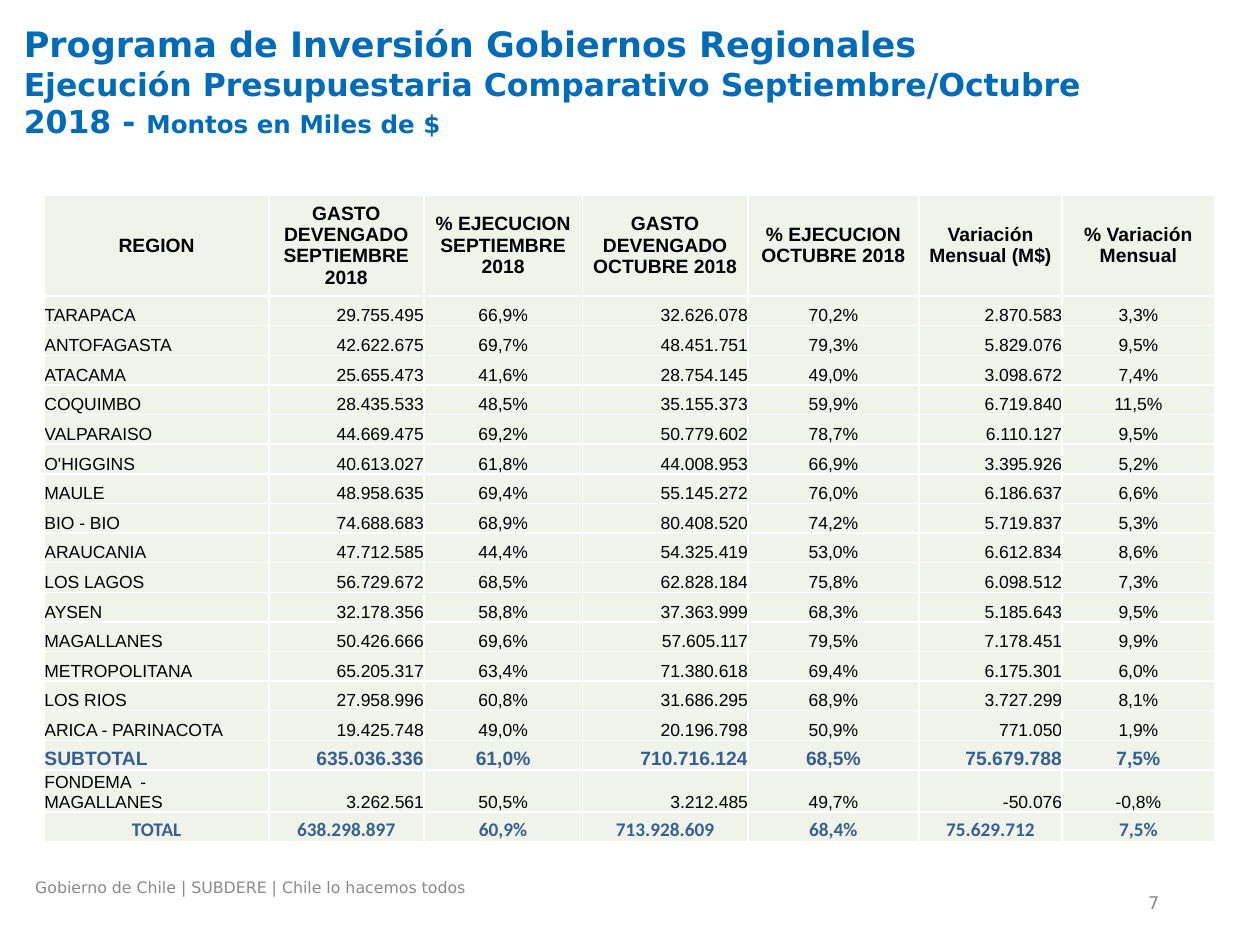
from dataclasses import dataclass

from lxml.etree import SubElement
from pptx import Presentation
from pptx.dml.color import RGBColor as Rgb
from pptx.enum.text import MSO_ANCHOR as Anchor, PP_ALIGN as Align
from pptx.oxml.ns import qn
from pptx.util import Pt


@dataclass(frozen=True)
class Theme:
    blue: str = "006CB7"
    gray: str = "898989"
    black: str = "000000"
    sum_blue: str = "376092"
    cell: str = "EFF3EA"
    border: str = "FFFFFF"
    sans: str = "DejaVu Sans"
    body: str = "Arial"
    total: str = "Calibri"
    title: int = 20
    subtitle: int = 18
    unit: int = 14
    footer: int = 9
    number: int = 10
    figure: int = 10
    strong: int = 11


@dataclass(frozen=True)
class RowLook:
    size: int
    color: str
    font: str
    bold: bool
    aligns: tuple
    anchor: Anchor = Anchor.BOTTOM


class Deck:
    def __init__(self, theme, width, height):
        self.theme = theme
        self.deck = Presentation()
        self.deck.slide_width, self.deck.slide_height = Pt(width), Pt(height)
        self.slide = self.deck.slides.add_slide(self.deck.slide_layouts[6])

    def style(self, run, size, color, font, bold=False):
        run.font.size, run.font.name, run.font.bold = Pt(size), font, bold
        run.font.color.rgb = Rgb.from_string(color)

    def text(self, box, lines, color, bold=False, align=Align.LEFT, anchor=Anchor.TOP):
        frame = self.slide.shapes.add_textbox(*map(Pt, box)).text_frame
        frame.word_wrap, frame.vertical_anchor = True, anchor
        paragraph = frame.paragraphs[0]
        paragraph.alignment = align
        for number, line in enumerate(lines):
            if number:
                paragraph.add_line_break()
            for wording, size in line:
                run = paragraph.add_run()
                run.text = wording
                self.style(run, size, color, self.theme.sans, bold)

    def outline(self, cell):
        properties = cell._tc.get_or_add_tcPr()
        for side in ("a:lnL", "a:lnR", "a:lnT", "a:lnB"):
            line = SubElement(properties, qn(side), w=str(Pt(1)))
            paint = SubElement(line, qn("a:solidFill"))
            SubElement(paint, qn("a:srgbClr"), val=self.theme.border)

    def cell(self, cell, wording, look, align):
        cell.margin_left = cell.margin_right = cell.margin_top = cell.margin_bottom = 0
        cell.vertical_anchor = look.anchor
        self.outline(cell)
        cell.fill.solid()
        cell.fill.fore_color.rgb = Rgb.from_string(self.theme.cell)
        cell.text_frame.text = wording
        paragraph = cell.text_frame.paragraphs[0]
        paragraph.alignment = align
        self.style(paragraph.runs[0], look.size, look.color, look.font, look.bold)

    def table(self, left, top, widths, heights, rows):
        box = map(Pt, (left, top, sum(widths), sum(heights)))
        table = self.slide.shapes.add_table(len(rows), len(widths), *box).table
        table.first_row = table.horz_banding = False
        for column, width in zip(table.columns, widths):
            column.width = Pt(width)
        for row, height, (look, wordings) in zip(table.rows, heights, rows):
            row.height = Pt(height)
            for cell, wording, align in zip(row.cells, wordings, look.aligns):
                self.cell(cell, wording, look, align)

    def save(self):
        self.deck.save("out.pptx")


HEADINGS = (
    "REGION", "GASTO DEVENGADO SEPTIEMBRE 2018", "% EJECUCION SEPTIEMBRE 2018",
    "GASTO DEVENGADO OCTUBRE 2018", "% EJECUCION OCTUBRE 2018",
    "Variación Mensual (M$)", "% Variación Mensual",
)
REGIONS = (
    ("TARAPACA", "29.755.495", "66,9%", "32.626.078", "70,2%", "2.870.583", "3,3%"),
    ("ANTOFAGASTA", "42.622.675", "69,7%", "48.451.751", "79,3%", "5.829.076", "9,5%"),
    ("ATACAMA", "25.655.473", "41,6%", "28.754.145", "49,0%", "3.098.672", "7,4%"),
    ("COQUIMBO", "28.435.533", "48,5%", "35.155.373", "59,9%", "6.719.840", "11,5%"),
    ("VALPARAISO", "44.669.475", "69,2%", "50.779.602", "78,7%", "6.110.127", "9,5%"),
    ("O'HIGGINS", "40.613.027", "61,8%", "44.008.953", "66,9%", "3.395.926", "5,2%"),
    ("MAULE", "48.958.635", "69,4%", "55.145.272", "76,0%", "6.186.637", "6,6%"),
    ("BIO - BIO", "74.688.683", "68,9%", "80.408.520", "74,2%", "5.719.837", "5,3%"),
    ("ARAUCANIA", "47.712.585", "44,4%", "54.325.419", "53,0%", "6.612.834", "8,6%"),
    ("LOS LAGOS", "56.729.672", "68,5%", "62.828.184", "75,8%", "6.098.512", "7,3%"),
    ("AYSEN", "32.178.356", "58,8%", "37.363.999", "68,3%", "5.185.643", "9,5%"),
    ("MAGALLANES", "50.426.666", "69,6%", "57.605.117", "79,5%", "7.178.451", "9,9%"),
    ("METROPOLITANA", "65.205.317", "63,4%", "71.380.618", "69,4%", "6.175.301", "6,0%"),
    ("LOS RIOS", "27.958.996", "60,8%", "31.686.295", "68,9%", "3.727.299", "8,1%"),
    ("ARICA - PARINACOTA", "19.425.748", "49,0%", "20.196.798", "50,9%", "771.050", "1,9%"),
)
SUBTOTAL = ("SUBTOTAL", "635.036.336", "61,0%", "710.716.124", "68,5%", "75.679.788", "7,5%")
FONDEMA = ("FONDEMA  - MAGALLANES", "3.262.561", "50,5%", "3.212.485", "49,7%", "-50.076", "-0,8%")
TOTAL = ("TOTAL", "638.298.897", "60,9%", "713.928.609", "68,4%", "75.629.712", "7,5%")


def main():
    theme = Theme()
    deck = Deck(theme, 720, 540)

    deck.text((6.5, 9.4, 646, 90), (
        (("Programa de Inversión Gobiernos Regionales", theme.title),),
        (("Ejecución Presupuestaria Comparativo Septiembre/Octubre 2018 - ", theme.subtitle),
         ("Montos en Miles de $", theme.unit)),
    ), theme.blue, bold=True)
    footer = "Gobierno de Chile | SUBDERE | Chile lo hacemos todos"
    deck.text((13, 498.2, 466.5, 19.5), (((footer, theme.footer),),), theme.gray)
    deck.text((502, 508.3, 167.5, 15), ((("7", theme.number),),), theme.gray,
              align=Align.RIGHT, anchor=Anchor.MIDDLE)

    centered = (Align.CENTER,) * len(HEADINGS)
    by_column = (Align.LEFT,) + (Align.RIGHT, Align.CENTER) * 3
    heading = RowLook(theme.strong, theme.black, theme.body, True, centered, Anchor.MIDDLE)
    region = RowLook(theme.figure, theme.black, theme.body, False, by_column)
    subtotal = RowLook(theme.strong, theme.sum_blue, theme.body, True, by_column)
    total = RowLook(theme.strong, theme.sum_blue, theme.total, True, centered)

    rows = [(heading, HEADINGS), *((region, figures) for figures in REGIONS),
            (subtotal, SUBTOTAL), (region, FONDEMA), (total, TOTAL)]
    widths = (128.2, 88.6, 90.7, 94.5, 97.8, 81.8, 87.2)
    heights = [57.8] + [16.95] * (len(rows) - 1)
    deck.table(25.4, 111.4, widths, heights, rows)
    deck.save()


if __name__ == "__main__":
    main()
